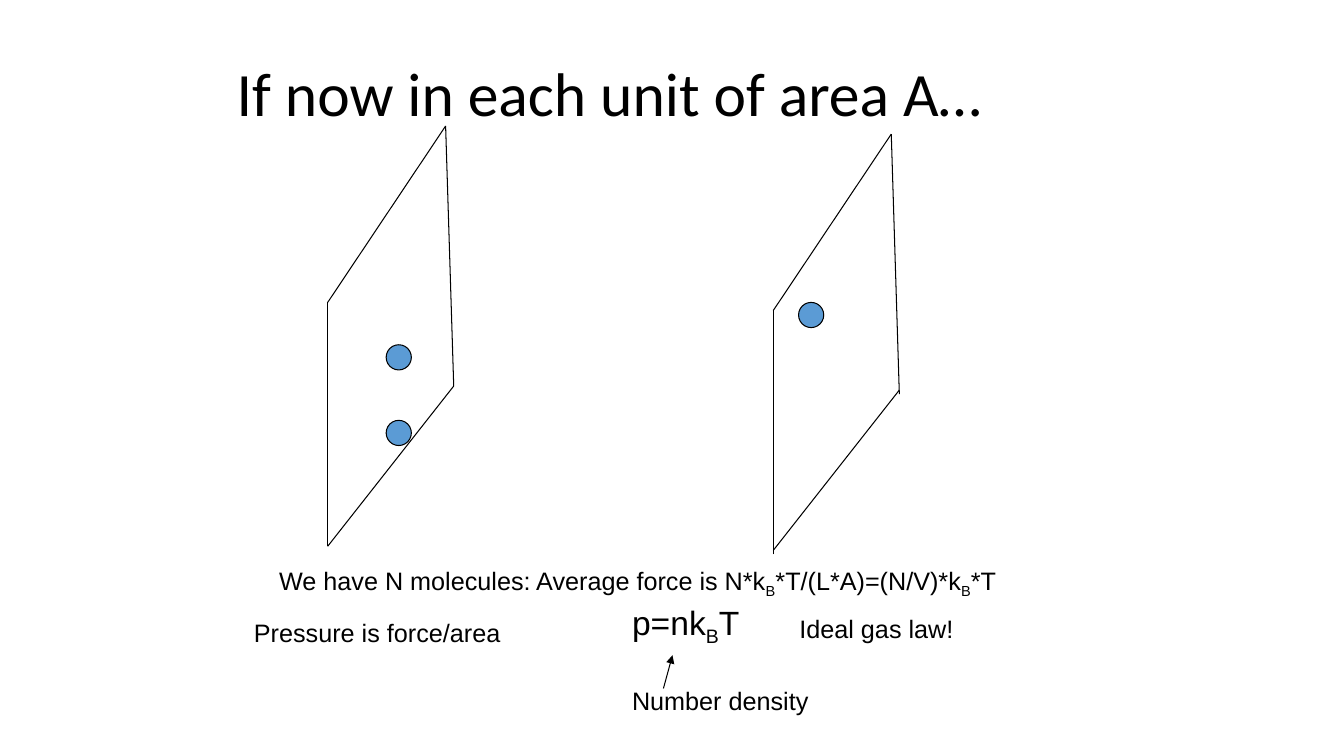
from dataclasses import dataclass

import pptx
import pptx.dml.color
import pptx.enum.shapes
import pptx.enum.text
import pptx.oxml
import pptx.oxml.ns
import pptx.presentation
import pptx.shapes.connector
import pptx.slide
import pptx.util
from pptx.util import Inches

Point = tuple[float, float]


@dataclass(frozen=True)
class Theme:
    ink: str = "000000"
    molecule: str = "5B9BD5"
    title_font: str = "Calibri"
    body_font: str = "Arial"
    title_size: int = 44
    formula_size: int = 24
    body_size: int = 18
    line_width: float = 0.75


@dataclass(frozen=True)
class Wall:
    left: float
    top: float
    floor_lift: float = 0


@dataclass(frozen=True)
class Molecule:
    left: float
    top: float


@dataclass(frozen=True)
class Run:
    text: str
    subscript: bool = False


@dataclass(frozen=True)
class Caption:
    left: float
    top: float
    width: float
    height: float
    runs: tuple[Run, ...]
    size: int
    font: str
    is_title: bool = False


THEME = Theme()
MOLECULE_DIAMETER = 0.25
SUB_B = Run("B", subscript=True)

WALLS = (Wall(3.25, 1.25), Wall(7.67, 1.33, floor_lift=0.04))
MOLECULES = (Molecule(3.83, 3.42), Molecule(7.92, 3), Molecule(3.83, 4.17))


def body(left: float, top: float, width: float, *runs: Run) -> Caption:
    return Caption(left, top, width, 0.4, runs, THEME.body_size, THEME.body_font)


CAPTIONS = (
    Caption(2.25, 0.33, 9, 1.25, (Run("If now in each unit of area A…"),),
            THEME.title_size, THEME.title_font, is_title=True),
    body(2.67, 5.56, 7.36, Run("We have N molecules: Average force is N*k"), SUB_B,
         Run("*T/(L*A)=(N/V)*k"), SUB_B, Run("*T")),
    body(2.42, 6.08, 2.65, Run("Pressure is force/area")),
    Caption(6.17, 5.92, 1.28, 0.5, (Run("p=nk"), SUB_B, Run("T")),
            THEME.formula_size, THEME.body_font),
    body(7.83, 6.04, 1.73, Run("Ideal gas law!")),
    body(6.17, 6.75, 1.95, Run("Number density")),
)


def rgb(value: str) -> pptx.dml.color.RGBColor:
    return pptx.dml.color.RGBColor.from_string(value)


def draw_line(slide: pptx.slide.Slide, start: Point, end: Point) -> pptx.shapes.connector.Connector:
    segment = slide.shapes.add_connector(
        pptx.enum.shapes.MSO_CONNECTOR.STRAIGHT, *map(Inches, start + end))
    segment.line.color.rgb = rgb(THEME.ink)
    segment.line.width = pptx.util.Pt(THEME.line_width)
    segment._element.spPr.append(pptx.oxml.parse_xml(
        f"<a:effectLst {pptx.oxml.ns.nsdecls('a')}/>"))
    return segment


def draw_arrow(slide: pptx.slide.Slide, start: Point, end: Point) -> None:
    arrow = draw_line(slide, start, end)
    arrow.line._get_or_add_ln().append(pptx.oxml.parse_xml(
        f"<a:tailEnd {pptx.oxml.ns.nsdecls('a')} type='triangle'/>"))


def draw_wall(slide: pptx.slide.Slide, wall: Wall) -> None:
    lift = wall.floor_lift
    edges = (
        ((0, 4.17), (0, 1.75)),
        ((0, 1.75), (1.17, 0)),
        ((0, 4.17 - lift), (1.25, 2.58 - lift)),
        ((1.25, 2.58), (1.17, 0)),
    )
    for edge in edges:
        start, end = ((wall.left + x, wall.top + y) for x, y in edge)
        draw_line(slide, start, end)


def draw_molecule(slide: pptx.slide.Slide, molecule: Molecule) -> None:
    ball = slide.shapes.add_shape(
        pptx.enum.shapes.MSO_SHAPE.OVAL, Inches(molecule.left), Inches(molecule.top),
        Inches(MOLECULE_DIAMETER), Inches(MOLECULE_DIAMETER))
    ball.shadow.inherit = False
    ball.fill.solid()
    ball.fill.fore_color.rgb = rgb(THEME.molecule)
    ball.line.color.rgb = rgb(THEME.ink)
    ball.line.width = pptx.util.Pt(THEME.line_width)


def draw_caption(slide: pptx.slide.Slide, caption: Caption) -> None:
    frame = slide.shapes.add_textbox(
        Inches(caption.left), Inches(caption.top),
        Inches(caption.width), Inches(caption.height)).text_frame
    frame.word_wrap = caption.is_title
    paragraph = frame.paragraphs[0]
    if caption.is_title:
        frame.vertical_anchor = pptx.enum.text.MSO_ANCHOR.MIDDLE
        paragraph.line_spacing = 0.9
    else:
        frame.auto_size = pptx.enum.text.MSO_AUTO_SIZE.SHAPE_TO_FIT_TEXT
    paragraph.font.name = caption.font
    paragraph.font.size = pptx.util.Pt(caption.size)
    paragraph.font.color.rgb = rgb(THEME.ink)
    for part in caption.runs:
        run = paragraph.add_run()
        run.text = part.text
        if part.subscript:
            run._r.get_or_add_rPr().set("baseline", "-25000")


def main() -> None:
    deck = pptx.Presentation()
    deck.slide_width, deck.slide_height = Inches(13.33), Inches(7.5)
    slide = deck.slides.add_slide(deck.slide_layouts[6])
    for wall in WALLS:
        draw_wall(slide, wall)
    for molecule in MOLECULES:
        draw_molecule(slide, molecule)
    for caption in CAPTIONS:
        draw_caption(slide, caption)
    draw_arrow(slide, (6.58, 6.83), (6.67, 6.5))
    deck.save("out.pptx")


if __name__ == "__main__":
    main()
